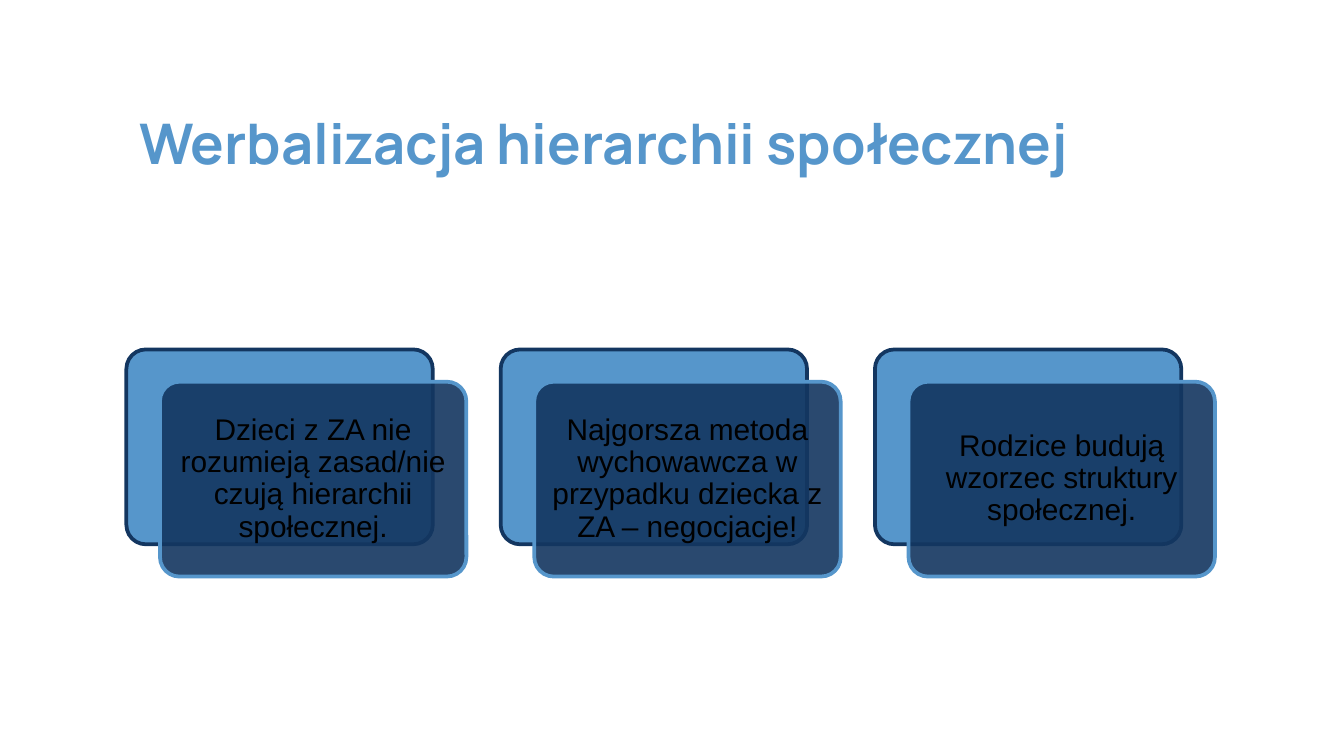
from dataclasses import dataclass

from lxml.etree import SubElement
from pptx import Presentation
from pptx.dml.color import RGBColor
from pptx.enum.shapes import MSO_SHAPE
from pptx.enum.text import MSO_ANCHOR, PP_ALIGN
from pptx.oxml.ns import qn
from pptx.util import Inches, Pt


@dataclass(frozen=True)
class Theme:
    sky: str = "5696CB"
    navy: str = "133660"
    ink: str = "000000"
    head: str = "Manrope"
    body: str = "Arial"
    large: int = 30
    small: int = 16
    edge: int = 2


@dataclass(frozen=True)
class Grid:
    left: float = 0.94
    top: float = 2.6
    span: float = 8.1
    width: float = 2.28
    height: float = 1.45
    right: float = 0.25
    down: float = 0.24
    rim: float = 0.04


THEME = Theme()
GRID = Grid()
CARDS = (
    "Dzieci z ZA nie rozumieją zasad/nie czują hierarchii społecznej.",
    "Najgorsza metoda wychowawcza w przypadku dziecka z ZA – negocjacje!",
    "Rodzice budują wzorzec struktury społecznej.",
)


def color(code):
    return RGBColor.from_string(code)


def add_text(shapes, area, text, face, size, tint, inset, bold=False):
    box = shapes.add_textbox(*map(Inches, area))
    frame = box.text_frame
    frame.word_wrap = True
    frame.vertical_anchor = MSO_ANCHOR.MIDDLE
    frame.margin_left = frame.margin_right = Inches(inset)
    frame.margin_top = frame.margin_bottom = Inches(inset)
    para = frame.paragraphs[0]
    run = para.add_run()
    run.text = text
    run.font.name = face
    run.font.size = Pt(size)
    run.font.bold = bold
    run.font.color.rgb = color(tint)
    return para


def add_panel(shapes, left, top, fill, line, alpha=100):
    area = left, top, GRID.width, GRID.height
    panel = shapes.add_shape(MSO_SHAPE.ROUNDED_RECTANGLE, *map(Inches, area))
    panel.adjustments[0] = 0.1
    panel.shadow.inherit = False
    panel.fill.solid()
    panel.fill.fore_color.rgb = color(fill)
    panel.line.color.rgb = color(line)
    panel.line.width = Pt(THEME.edge)
    if alpha < 100:
        tone = panel.fill._xPr.find(qn("a:solidFill"))[0]
        SubElement(tone, qn("a:alpha"), val=str(alpha * 1000))


def add_card(shapes, col, text):
    pitch = (GRID.span - GRID.width - GRID.right) / (len(CARDS) - 1)
    left = GRID.left + col * pitch
    add_panel(shapes, left, GRID.top, THEME.sky, THEME.navy)
    left, top, rim = left + GRID.right, GRID.top + GRID.down, GRID.rim
    add_panel(shapes, left, top, THEME.navy, THEME.sky, 90)
    area = left + rim, top + rim, GRID.width - 2 * rim, GRID.height - 2 * rim
    para = add_text(shapes, area, text, THEME.body, THEME.small, THEME.ink, 0.07)
    para.alignment = PP_ALIGN.CENTER
    para.line_spacing = 0.9
    para.space_after = Pt(0.35 * THEME.small)


def main():
    deck = Presentation()
    deck.slide_width = Inches(10)
    deck.slide_height = deck.slide_width * 9 // 16
    slide = deck.slides.add_slide(deck.slide_layouts[6])
    area = GRID.left, 0.5, GRID.span, 1.11
    title = "Werbalizacja hierarchii społecznej"
    add_text(slide.shapes, area, title, THEME.head, THEME.large, THEME.sky, 0.1, True)
    group = slide.shapes.add_group_shape()
    for col, text in enumerate(CARDS):
        add_card(group.shapes, col, text)
    deck.save("out.pptx")


if __name__ == "__main__":
    main()
